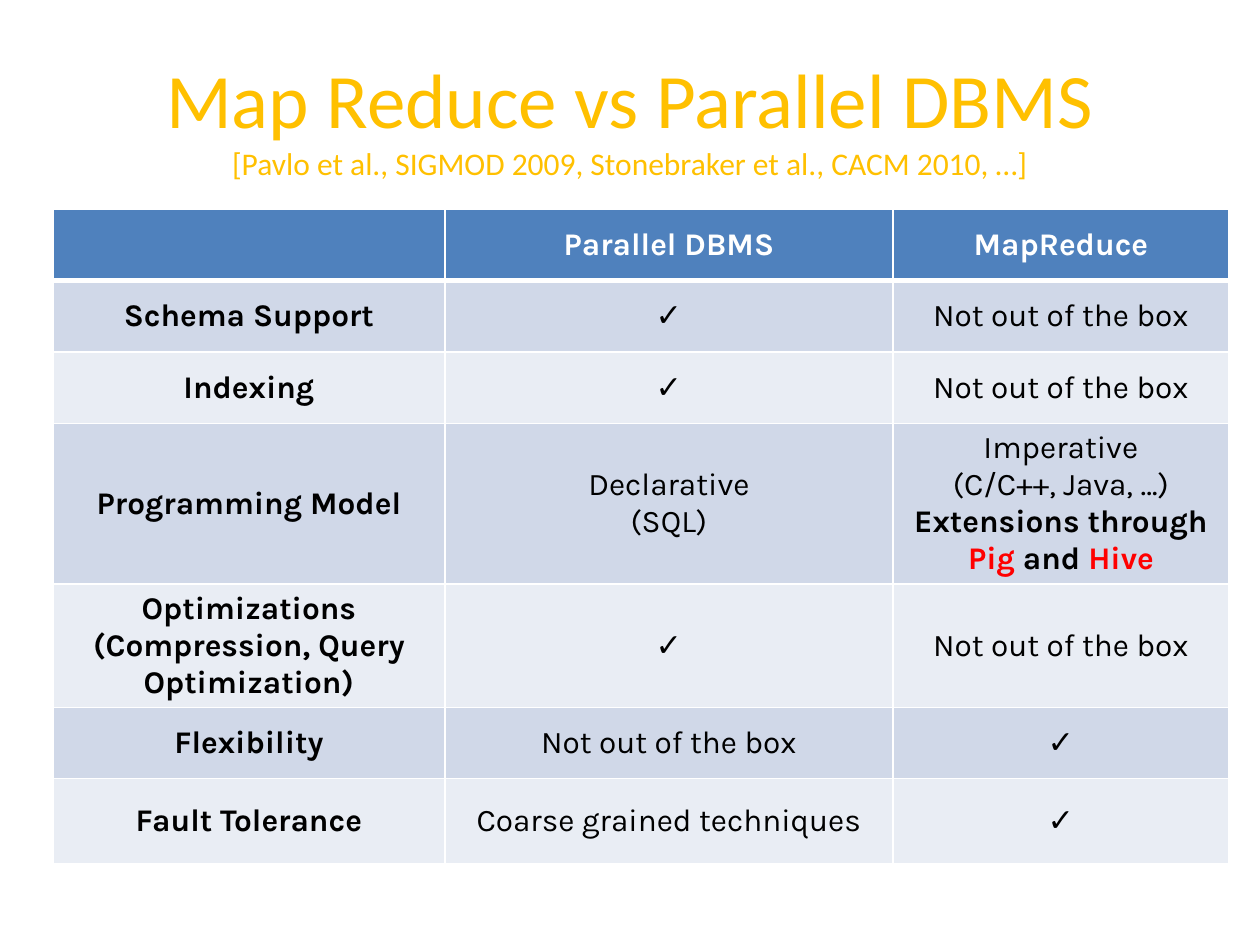
from lxml import etree
from pptx import Presentation
from pptx.dml.color import RGBColor
from pptx.enum import text
from pptx.oxml.ns import qn
from pptx.util import Pt

GOLD = RGBColor(0xFF, 0xC0, 0x00)
WHITE = RGBColor(0xFF, 0xFF, 0xFF)
BLACK = RGBColor(0, 0, 0)
RED = RGBColor(0xFF, 0, 0)
HEADER = RGBColor(0x4F, 0x81, 0xBD)
BANDS = [RGBColor(0xE9, 0xED, 0xF4), RGBColor(0xD0, 0xD8, 0xE8)]

CHECK = "✓"
MISSING = "Not out of the box"
ROWS = [
    ("", "Parallel DBMS", "MapReduce"),
    ("Schema Support", CHECK, MISSING),
    ("Indexing", CHECK, MISSING),
    ("Programming Model", "Declarative\n(SQL)",
     "Imperative\n(C/C++, Java, …)\nExtensions through"),
    ("Optimizations (Compression, Query Optimization)", CHECK, MISSING),
    ("Flexibility", MISSING, CHECK),
    ("Fault Tolerance", "Coarse grained techniques", CHECK),
]
WIDTHS = [224, 256, 192]
HEIGHTS = [40.8, 40.8, 40.8, 91, 70, 40.8, 48.8]
EXTENSIONS = [("Pig", RED), (" and ", BLACK), ("Hive", RED)]


def add_border(cell, side, width):
    """Draw one white edge of a table cell."""
    line = etree.SubElement(cell._tc.get_or_add_tcPr(), qn("a:" + side), w=str(Pt(width)))
    fill = etree.SubElement(line, qn("a:solidFill"))
    etree.SubElement(fill, qn("a:srgbClr"), val=str(WHITE))


def format_span(span, color, bold):
    span.font.name = "Karla"
    span.font.size = Pt(18)
    span.font.bold = bold
    span.font.color.rgb = color


deck = Presentation()
deck.slide_width, deck.slide_height = Pt(720), Pt(540)
page = deck.slides.add_slide(deck.slide_layouts[5])

# Title with its citation line
title = page.shapes.title
title.left, title.top, title.width, title.height = Pt(36), Pt(21.6), Pt(648), Pt(90)
title.text_frame.text = (
    "Map Reduce vs Parallel DBMS\v"
    "[Pavlo et al., SIGMOD 2009, Stonebraker et al., CACM 2010, …]")
title.text_frame.vertical_anchor = text.MSO_ANCHOR.MIDDLE
title.text_frame.auto_size = text.MSO_AUTO_SIZE.NONE
para = title.text_frame.paragraphs[0]
para.alignment = text.PP_ALIGN.CENTER
for span, size in zip(para.runs, (44, 18)):
    span.font.name = "Calibri"
    span.font.size = Pt(size)
    span.font.color.rgb = GOLD

# Comparison table
table = page.shapes.add_table(
    len(ROWS), len(WIDTHS), Pt(30.24), Pt(119.5), Pt(sum(WIDTHS)), Pt(sum(HEIGHTS))).table
for column, width in zip(table.columns, WIDTHS):
    column.width = Pt(width)
for row, height in zip(table.rows, HEIGHTS):
    row.height = Pt(height)

for r, labels in enumerate(ROWS):
    for c, label in enumerate(labels):
        cell = table.cell(r, c)
        add_border(cell, "lnL", 1)
        add_border(cell, "lnR", 1)
        add_border(cell, "lnT", 3 if r == 1 else 1)
        add_border(cell, "lnB", 3 if r == 0 else 1)
        cell.fill.solid()
        cell.fill.fore_color.rgb = BANDS[r % 2] if r else HEADER
        cell.vertical_anchor = text.MSO_ANCHOR.MIDDLE
        cell.text_frame.text = label
        for para in cell.text_frame.paragraphs:
            para.alignment = text.PP_ALIGN.CENTER
            for span in para.runs:
                format_span(span, BLACK if r else WHITE, r == 0 or c == 0)

# Highlighted extensions in the programming model row
frame = table.cell(3, 2).text_frame
frame.paragraphs[-1].runs[0].font.bold = True
para = frame.add_paragraph()
para.alignment = text.PP_ALIGN.CENTER
for word, color in EXTENSIONS:
    span = para.add_run()
    span.text = word
    format_span(span, color, True)

deck.save("out.pptx")
